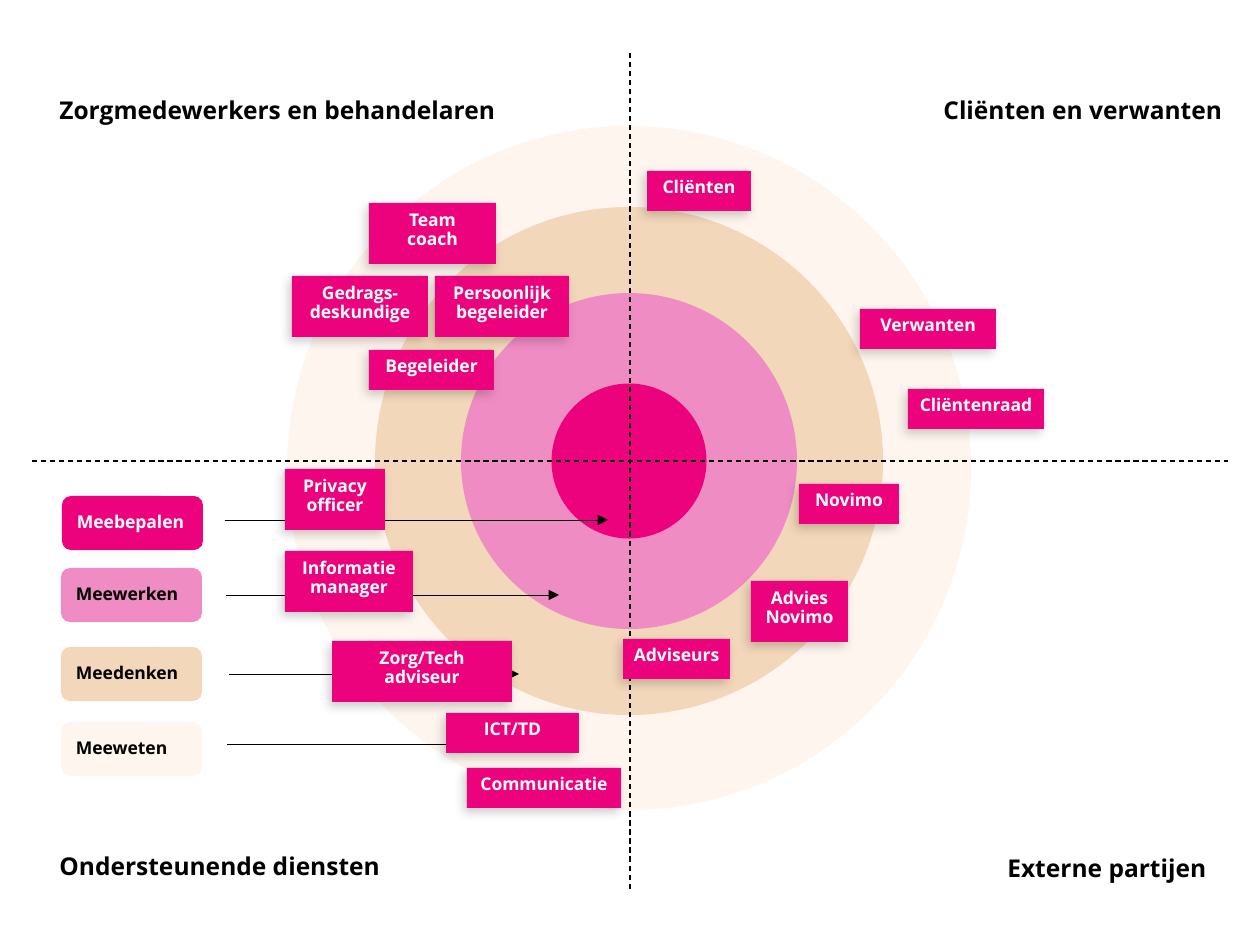
from lxml.etree import SubElement
from pptx import Presentation
from pptx.dml.color import RGBColor
from pptx.enum.dml import MSO_LINE
from pptx.enum.shapes import MSO_CONNECTOR, MSO_SHAPE
from pptx.enum.text import MSO_ANCHOR, MSO_AUTO_SIZE, PP_ALIGN
from pptx.oxml.ns import qn
from pptx.util import Emu, Inches, Pt

PINK = RGBColor(0xED, 0x02, 0x7E)
LIGHT_PINK = RGBColor(0xEF, 0x8C, 0xC4)
SAND = RGBColor(0xF3, 0xD7, 0xBA)
CREAM = RGBColor(0xFE, 0xF5, 0xEE)
BLACK = RGBColor(0, 0, 0)
WHITE = RGBColor(255, 255, 255)
FONT = "Open Sans"
PX_PER_INCH = 126

# Rings: diameter, vertical centre, colour (outer to inner)
RING_CENTRE_X = 629
RINGS = [(684, 468, CREAM), (508, 461, SAND), (336, 461, LIGHT_PINK), (155, 461, PINK)]

# Axes: start and end points
AXES = [(32, 461, 1228, 461), (630, 53, 630, 892)]

# Legend: label, left, top, fill, text colour, arrow start x, arrow end x, arrow y
LEGEND_SIZE = (141, 54)
LEGEND = [
    ("Meebepalen", 62, 496, PINK, WHITE, 225, 608, 520),
    ("Meewerken", 61, 568, LIGHT_PINK, BLACK, 226, 559, 595),
    ("Meedenken", 61, 647, SAND, BLACK, 229, 519, 674),
    ("Meeweten", 61, 722, CREAM, BLACK, 227, 459, 744),
]

# Quadrant labels: text, left, top, width
QUADRANTS = [
    ("Ondersteunende diensten", 47, 848, 349),
    ("Externe partijen", 995, 850, 227),
    ("Cliënten en verwanten", 931, 92, 307),
    ("Zorgmedewerkers en behandelaren", 47, 92, 465),
]
QUADRANT_HEIGHT = 43

# Stakeholders: text, left, top, width, number of lines
STAKEHOLDERS = [
    ("Persoonlijk begeleider", 435, 276, 134, 2),
    ("Team\ncoach", 369, 203, 127, 2),
    ("Gedrags- deskundige", 292, 276, 136, 2),
    ("Begeleider", 369, 350, 125, 1),
    ("Cliënten", 647, 171, 104, 1),
    ("Verwanten", 860, 309, 136, 1),
    ("Cliëntenraad", 908, 389, 136, 1),
    ("Novimo", 799, 484, 100, 1),
    ("Advies\nNovimo", 751, 581, 97, 2),
    ("Adviseurs", 623, 639, 107, 1),
    ("Communicatie", 467, 768, 154, 1),
    ("ICT/TD", 446, 713, 133, 1),
    ("Zorg/Tech adviseur", 332, 641, 180, 2),
    ("Informatie\nmanager", 285, 551, 128, 2),
    ("Privacy\nofficer", 285, 469, 100, 2),
]
BOX_HEIGHTS = {1: 40, 2: 61}


def px(value):
    return Emu(round(value * 914400 / PX_PER_INCH))


def add_filled_shape(slide, kind, left, top, width, height, fill):
    shape = slide.shapes.add_shape(kind, px(left), px(top), px(width), px(height))
    shape.fill.solid()
    shape.fill.fore_color.rgb = fill
    shape.line.fill.background()
    shape.shadow.inherit = False
    return shape


def write(shape, text, size, colour, align=PP_ALIGN.LEFT):
    shape.text_frame.text = text
    for paragraph in shape.text_frame.paragraphs:
        paragraph.alignment = align
        paragraph.line_spacing = 0.9
        font = paragraph.font
        font.name, font.size, font.bold = FONT, Pt(size), True
        font.color.rgb = colour


def add_line(slide, points, width):
    connector = slide.shapes.add_connector(MSO_CONNECTOR.STRAIGHT, *map(px, points))
    connector.line.color.rgb = BLACK
    connector.line.width = Pt(width)
    SubElement(connector._element.spPr, qn("a:effectLst"))
    return connector


def add_drop_shadow(shape):
    effects = shape._element.spPr.find(qn("a:effectLst"))
    shadow = SubElement(effects, qn("a:outerShdw"), blurRad=str(Pt(6)), dist=str(Pt(3)),
                        dir=str(130 * 60000), algn="ctr", rotWithShape="0")
    colour = SubElement(shadow, qn("a:srgbClr"), val=str(BLACK))
    SubElement(colour, qn("a:alpha"), val="20000")


def main():
    presentation = Presentation()
    presentation.slide_width, presentation.slide_height = Inches(10), Inches(7.5)
    slide = presentation.slides.add_slide(presentation.slide_layouts[6])

    # Rings and axes
    for diameter, centre_y, fill in RINGS:
        add_filled_shape(slide, MSO_SHAPE.OVAL, RING_CENTRE_X - diameter / 2,
                         centre_y - diameter / 2, diameter, diameter, fill)
    for points in AXES:
        add_line(slide, points, 0.75).line.dash_style = MSO_LINE.DASH

    # Legend with arrows into the rings
    for label, left, top, fill, colour, start, end, y in LEGEND:
        key = add_filled_shape(slide, MSO_SHAPE.ROUNDED_RECTANGLE, left, top, *LEGEND_SIZE, fill)
        write(key, label, 10, colour)
        arrow = add_line(slide, (start, y, end, y), 0.5)
        SubElement(arrow.line._get_or_add_ln(), qn("a:tailEnd"), type="triangle")

    # Quadrant labels
    for text, left, top, width in QUADRANTS:
        label = slide.shapes.add_textbox(px(left), px(top), px(width), px(QUADRANT_HEIGHT))
        label.text_frame.word_wrap = False
        label.text_frame.auto_size = MSO_AUTO_SIZE.SHAPE_TO_FIT_TEXT
        write(label, text, 14, BLACK)

    # Stakeholder boxes
    for text, left, top, width, lines in STAKEHOLDERS:
        box = add_filled_shape(slide, MSO_SHAPE.RECTANGLE, left, top, width,
                               BOX_HEIGHTS[lines], PINK)
        add_drop_shadow(box)
        frame = box.text_frame
        frame.word_wrap = True
        frame.auto_size = MSO_AUTO_SIZE.SHAPE_TO_FIT_TEXT
        frame.vertical_anchor = MSO_ANCHOR.MIDDLE
        frame.margin_left = frame.margin_right = Inches(0.08)
        frame.margin_top, frame.margin_bottom = Inches(0.05), Inches(0.1)
        write(box, text, 10, WHITE, PP_ALIGN.CENTER)

    presentation.save("out.pptx")


if __name__ == "__main__":
    main()
